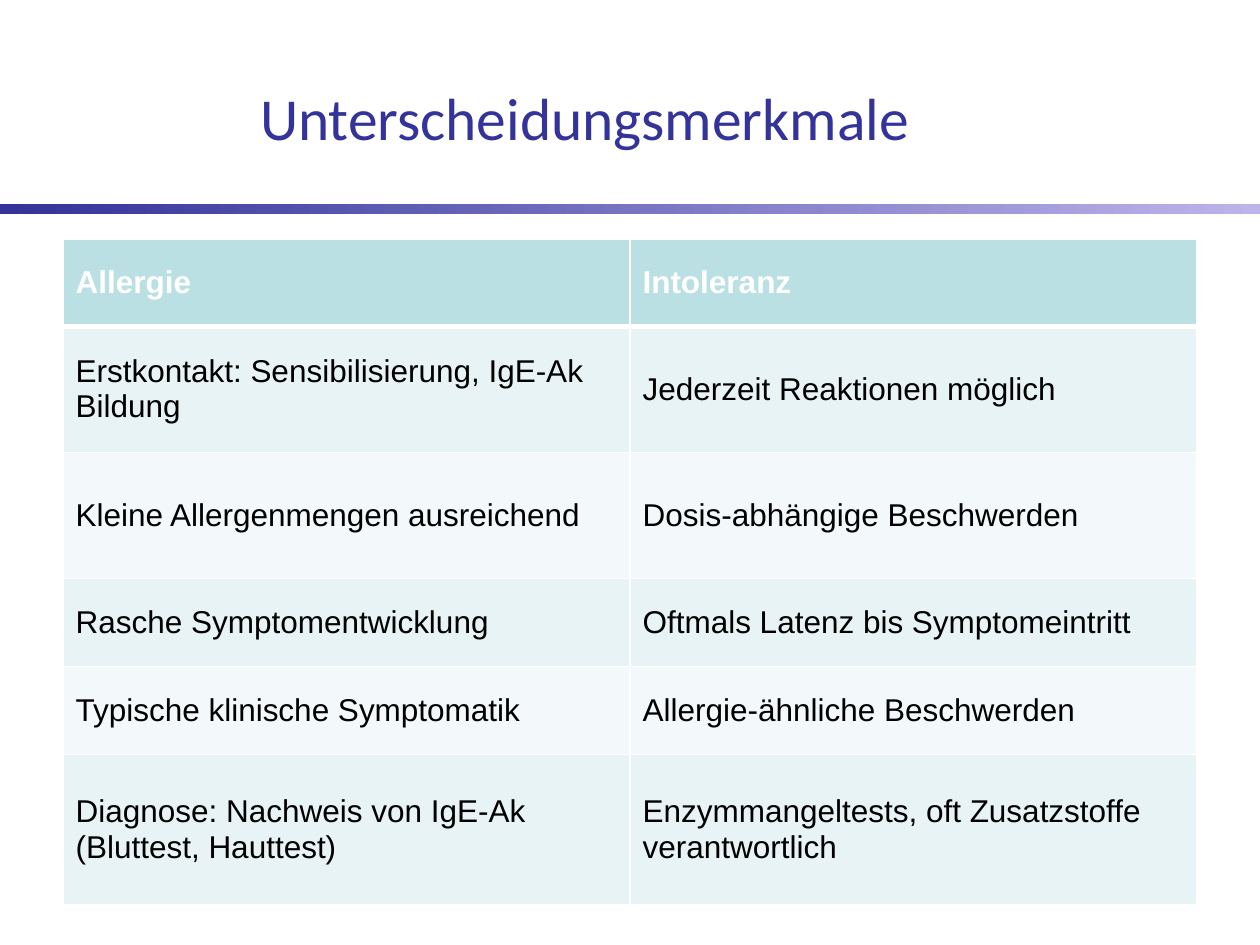
from lxml import etree
from pptx import Presentation
from pptx.dml.color import RGBColor
from pptx.enum.shapes import MSO_SHAPE
from pptx.enum.text import MSO_ANCHOR, PP_ALIGN
from pptx.oxml.ns import qn
from pptx.util import Inches, Pt

RECT = MSO_SHAPE.RECTANGLE
MIDDLE = MSO_ANCHOR.MIDDLE
CENTER = PP_ALIGN.CENTER

NAVY = RGBColor(0x33, 0x33, 0x99)
LILAC = RGBColor(0xBC, 0xB4, 0xEA)
WHITE = RGBColor(0xFF, 0xFF, 0xFF)
BLACK = RGBColor(0, 0, 0)
TEAL = RGBColor(0xBB, 0xE0, 0xE3)
BANDS = [RGBColor(0xF3, 0xF9, 0xFA), RGBColor(0xE7, 0xF3, 0xF4)]

TITLE = "Unterscheidungsmerkmale"
ROWS = [
    (0.69, "Allergie", "Intoleranz"),
    (1, "Erstkontakt: Sensibilisierung, IgE-Ak Bildung",
     "Jederzeit Reaktionen möglich"),
    (1, "Kleine Allergenmengen ausreichend", "Dosis-abhängige Beschwerden"),
    (0.7, "Rasche Symptomentwicklung", "Oftmals Latenz bis Symptomeintritt"),
    (0.7, "Typische klinische Symptomatik", "Allergie-ähnliche Beschwerden"),
    (1.19, "Diagnose: Nachweis von IgE-Ak (Bluttest, Hauttest)",
     "Enzymmangeltests, oft Zusatzstoffe verantwortlich"),
]


def box(left, top, width, height):
    return [Inches(n) for n in (left, top, width, height)]


def add_run(para, text, font, size, color, bold=False):
    run = para.add_run()
    run.text = text
    run.font.name = font
    run.font.size = Pt(size)
    run.font.color.rgb = color
    run.font.bold = bold


def add_title(slide):
    title = slide.shapes.title
    title.left, title.top, title.width, title.height = box(0.5, 0.3, 8.28, 1.25)
    frame = title.text_frame
    frame.word_wrap = True
    frame.vertical_anchor = MIDDLE
    para = frame.paragraphs[0]
    para.alignment = CENTER
    add_run(para, TITLE, "Calibri", 34, NAVY)


def add_bar(slide):
    bar = slide.shapes.add_shape(RECT, *box(0, 1.62, 10, 0.08))
    bar.shadow.inherit = False
    bar.line.fill.background()
    bar.fill.gradient()
    bar.fill.gradient_angle = 0
    for stop, color in zip(bar.fill.gradient_stops, (NAVY, LILAC)):
        stop.color.rgb = color


def add_edges(cell, row):
    thick = {"T": 3 if row == 1 else 1, "B": 3 if row == 0 else 1}
    props = cell._tc.get_or_add_tcPr()
    for side in "LRTB":
        line = etree.SubElement(props, qn(f"a:ln{side}"))
        line.set("w", str(Pt(thick.get(side, 1))))
        fill = etree.SubElement(line, qn("a:solidFill"))
        etree.SubElement(fill, qn("a:srgbClr")).set("val", str(WHITE))


def add_grid(slide):
    high = sum(row[0] for row in ROWS)
    frame = slide.shapes.add_table(len(ROWS), 2, *box(0.5, 1.9, 9, high))
    table = frame.table
    for r, (size, *texts) in enumerate(ROWS):
        table.rows[r].height = Inches(size)
        head = r == 0
        for c, text in enumerate(texts):
            cell = table.cell(r, c)
            add_edges(cell, r)
            cell.fill.solid()
            cell.fill.fore_color.rgb = TEAL if head else BANDS[r % 2]
            cell.vertical_anchor = MIDDLE
            add_run(cell.text_frame.paragraphs[0], text, "Arial", 18,
                    WHITE if head else BLACK, head)


def main():
    deck = Presentation()
    deck.slide_width, deck.slide_height = Inches(10), Inches(7.5)
    slide = deck.slides.add_slide(deck.slide_layouts[5])
    add_bar(slide)
    add_title(slide)
    add_grid(slide)
    deck.save("out.pptx")


if __name__ == "__main__":
    main()
